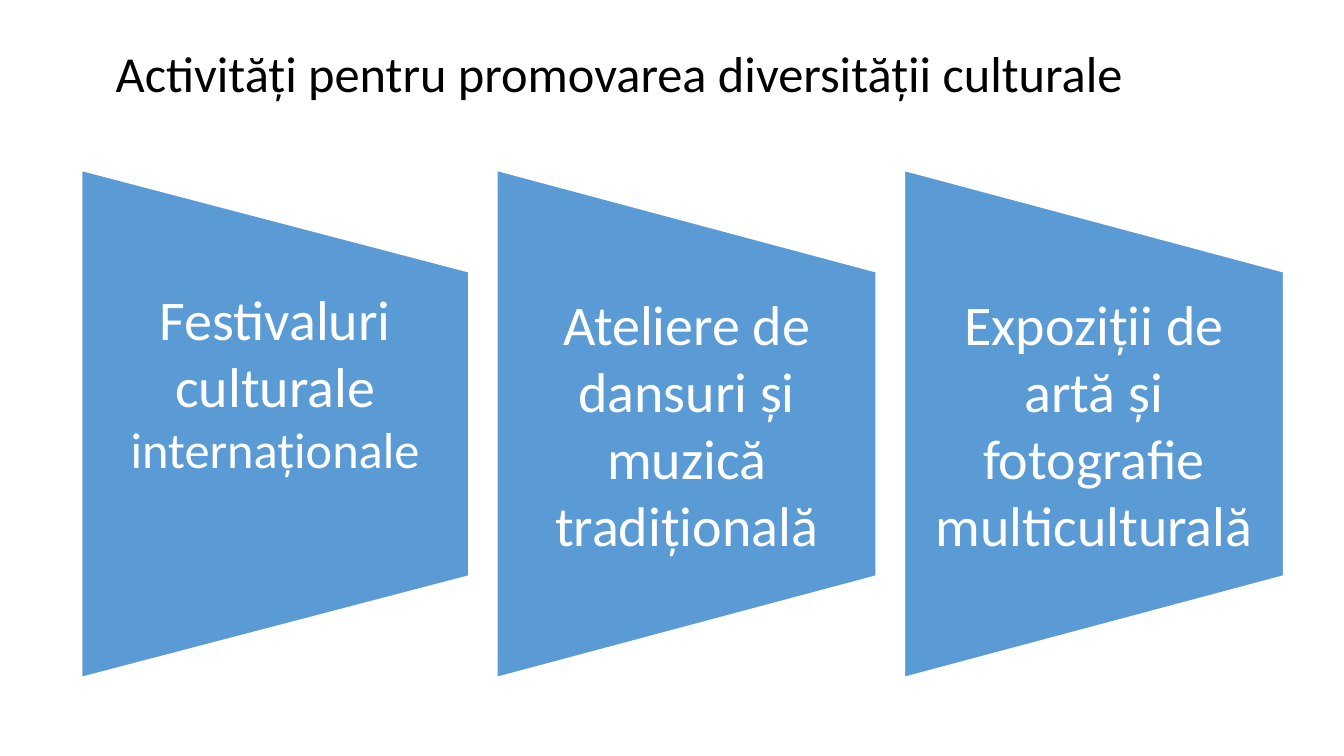
from pptx import Presentation
from pptx.dml.color import RGBColor
from pptx.enum import shapes, text
from pptx.util import Inches, Pt

FONT = "Calibri"
WHITE, BLACK, BLUE = "FFFFFF", "000000", "5B9BD5"
PANEL_TOP, PANEL_HEIGHT, PANEL_GAP = 1.69, 5.03, 0.28
TEXT_TOP, TEXT_HEIGHT = 2.69, 3.02

# Panel width, space kept free under the text, runs as (wording, size)
ACTIVITIES = [
    (3.84, 0.83, [("Festivaluri culturale ", 40), ("internaționale", 36)]),
    (3.76, 0, [("Ateliere de dansuri și muzică tradițională", 40)]),
    (3.76, 0, [("Expoziții de artă și fotografie multiculturală", 40)]),
]


def rgb(value):
    return RGBColor.from_string(value)


def write(frame, runs, color=WHITE, side=0, bottom=0):
    """Fill a frame with one centred paragraph of (wording, size) runs."""
    frame.word_wrap = True
    frame.auto_size = text.MSO_AUTO_SIZE.NONE
    frame.vertical_anchor = text.MSO_ANCHOR.MIDDLE
    frame.margin_left = frame.margin_right = Inches(side)
    frame.margin_top, frame.margin_bottom = 0, Inches(bottom)
    paragraph = frame.paragraphs[0]
    paragraph.alignment = text.PP_ALIGN.CENTER
    for wording, size in runs:
        run = paragraph.add_run()
        run.text = wording
        run.font.name = FONT
        run.font.size = Pt(size)
        run.font.color.rgb = rgb(color)


def add_title(slide, left, top, width, height):
    title = slide.shapes.title
    title.left, title.top = Inches(left), Inches(top)
    title.width, title.height = Inches(width), Inches(height)
    write(title.text_frame,
          [("Activități pentru promovarea diversității culturale", 36)], BLACK)


def add_panel(slide, left, width, bottom, runs):
    """Place a trapezoid turned on its side, with upright text over it."""
    shift = (PANEL_HEIGHT - width) / 2
    panel = slide.shapes.add_shape(
        shapes.MSO_SHAPE.FLOWCHART_MANUAL_OPERATION,
        Inches(left - shift), Inches(PANEL_TOP + shift),
        Inches(PANEL_HEIGHT), Inches(width))
    panel.rotation = 270
    panel.shadow.inherit = False
    panel.fill.solid()
    panel.fill.fore_color.rgb = rgb(BLUE)
    panel.line.color.rgb = rgb(WHITE)
    panel.line.width = Pt(1)
    label = slide.shapes.add_textbox(
        Inches(left), Inches(TEXT_TOP), Inches(width), Inches(TEXT_HEIGHT))
    write(label.text_frame, runs, side=0.28, bottom=bottom)


def main():
    deck = Presentation()
    deck.slide_width, deck.slide_height = Inches(13.33), Inches(7.5)
    slide = deck.slides.add_slide(deck.slide_layouts[5])
    add_title(slide, 1.05, 0.39, 10.19, 0.65)
    left = 0.81
    for width, bottom, runs in ACTIVITIES:
        add_panel(slide, left, width, bottom, runs)
        left += width + PANEL_GAP
    deck.save("out.pptx")


if __name__ == "__main__":
    main()
